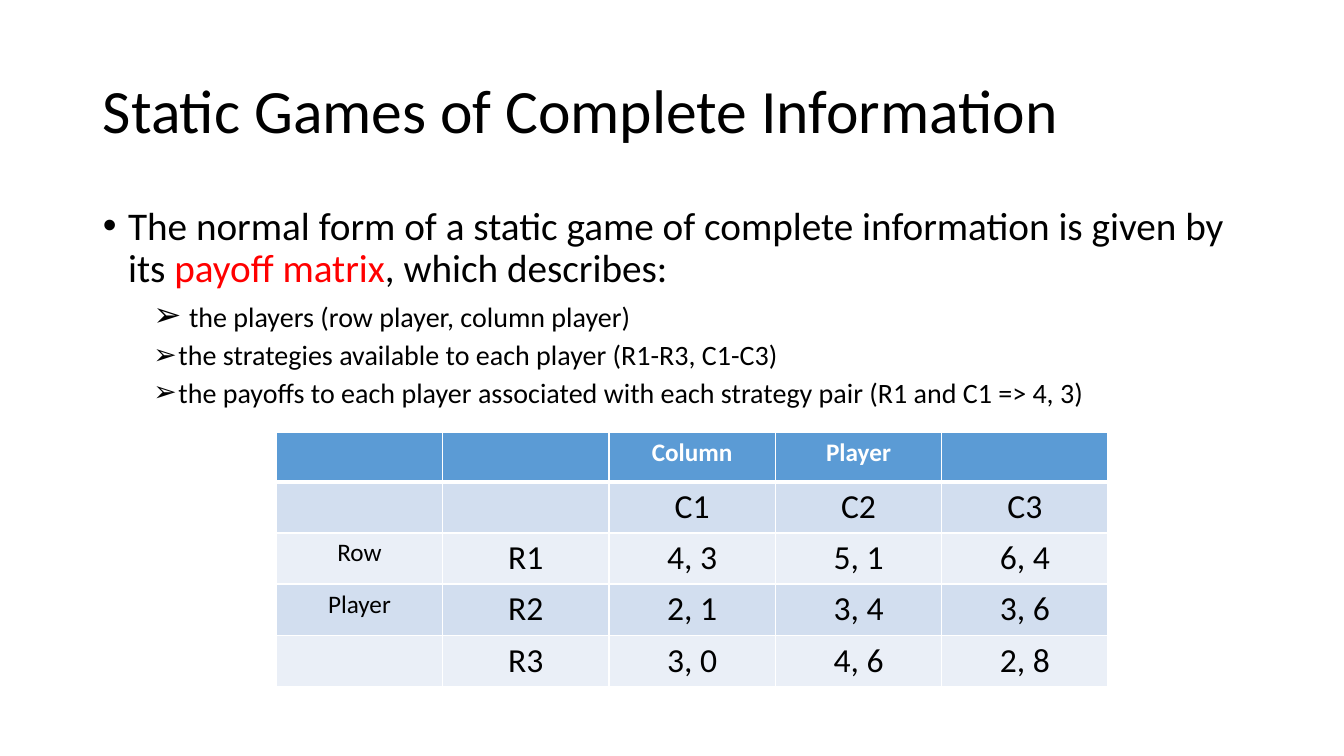
"""Build a slide on the normal form of static games with a payoff matrix."""
from lxml import etree
from pptx import Presentation
from pptx.dml.color import RGBColor
from pptx.enum import text
from pptx.oxml import ns
from pptx.util import Inches, Pt

BLACK = RGBColor(0x00, 0x00, 0x00)
RED = RGBColor(0xFF, 0x00, 0x00)
WHITE = RGBColor(0xFF, 0xFF, 0xFF)
HEADER_BLUE = RGBColor(0x5B, 0x9B, 0xD5)
DARK_BAND = RGBColor(0xD2, 0xDE, 0xEF)
LIGHT_BAND = RGBColor(0xEA, 0xEF, 0xF7)
FONT = "Calibri"

TITLE = "Static Games of Complete Information"
BULLETS = [
    (0, [("The normal form of a static game of complete information is given by its ", 28, BLACK),
         ("payoff matrix", 28, RED),
         (", which describes:", 28, BLACK)]),
    (1, [(" ", 24, BLACK), ("the players (row player, column player)", 20, BLACK)]),
    (1, [("the strategies available to each player (R1-R3, C1-C3)", 20, BLACK)]),
    (1, [("the payoffs to each player associated with each strategy pair (R1 and C1 => 4, 3)",
          20, BLACK)]),
]
LEVELS = [("•", 0.25, 10), ("➢", 0.75, 5)]
PAYOFFS = [
    ["", "", "Column", "Player", ""],
    ["", "", "C1", "C2", "C3"],
    ["Row", "R1", "4, 3", "5, 1", "6, 4"],
    ["Player", "R2", "2, 1", "3, 4", "3, 6"],
    ["", "R3", "3, 0", "4, 6", "2, 8"],
]
COLUMN_WIDTH, ROW_HEIGHT = 1.65, 0.49


def style(run, size, color, bold=False):
    """Set the font of a run."""
    run.font.name, run.font.size, run.font.bold = FONT, Pt(size), bold
    run.font.color.rgb = color


def place(shape, left, top, width, height, anchor):
    """Position a placeholder and fix its text frame."""
    shape.left, shape.top = Inches(left), Inches(top)
    shape.width, shape.height = Inches(width), Inches(height)
    frame = shape.text_frame
    frame.auto_size = text.MSO_AUTO_SIZE.NONE
    frame.word_wrap = True
    frame.vertical_anchor = anchor
    return frame


def set_bullet(paragraph, level):
    """Give a paragraph the bullet, indent and spacing of its level."""
    character, margin, space_before = LEVELS[level]
    paragraph.level = level
    paragraph.line_spacing = 0.9
    paragraph.space_before = Pt(space_before)
    properties = paragraph._p.get_or_add_pPr()
    properties.set("marL", str(Inches(margin)))
    properties.set("indent", str(Inches(-0.25)))
    etree.SubElement(properties, ns.qn("a:buFont")).set("typeface", "Arial")
    etree.SubElement(properties, ns.qn("a:buChar")).set("char", character)


def set_borders(cell, bottom_width):
    """Draw white borders around a cell."""
    properties = cell._tc.get_or_add_tcPr()
    sides = [("lnL", 1), ("lnR", 1), ("lnT", 1), ("lnB", bottom_width)]
    for position, (side, width) in enumerate(sides):
        line = etree.Element(ns.qn(f"a:{side}"), w=str(Pt(width)))
        fill = etree.SubElement(line, ns.qn("a:solidFill"))
        etree.SubElement(fill, ns.qn("a:srgbClr")).set("val", str(WHITE))
        properties.insert(position, line)


def add_payoff_matrix(slide):
    """Add the payoff table."""
    rows, columns = len(PAYOFFS), len(PAYOFFS[0])
    table = slide.shapes.add_table(
        rows, columns, Inches(2.74), Inches(4.29),
        Inches(COLUMN_WIDTH * columns), Inches(ROW_HEIGHT * rows)).table
    for column in table.columns:
        column.width = Inches(COLUMN_WIDTH)
    for row_index, values in enumerate(PAYOFFS):
        table.rows[row_index].height = Inches(ROW_HEIGHT)
        header = row_index == 0
        band = HEADER_BLUE if header else DARK_BAND if row_index % 2 else LIGHT_BAND
        for column_index, value in enumerate(values):
            cell = table.cell(row_index, column_index)
            cell.fill.solid()
            cell.fill.fore_color.rgb = band
            bottom_width = 3 if header else 1
            set_borders(cell, bottom_width)
            if row_index == 1:
                cell._tc.tcPr.find(ns.qn("a:lnT")).set("w", str(Pt(3)))
            cell.text_frame.text = value
            paragraph = cell.text_frame.paragraphs[0]
            paragraph.alignment = text.PP_ALIGN.CENTER
            size = 18 if header or column_index == 0 else 24
            for run in paragraph.runs:
                style(run, size, WHITE if header else BLACK, header)


def main():
    """Create the presentation."""
    presentation = Presentation()
    presentation.slide_width, presentation.slide_height = Inches(13.33), Inches(7.5)
    slide = presentation.slides.add_slide(presentation.slide_layouts[1])

    title = place(slide.shapes.title, 0.92, 0.4, 11.5, 1.45, text.MSO_ANCHOR.MIDDLE)
    title.text = TITLE
    heading = title.paragraphs[0]
    heading.alignment = text.PP_ALIGN.LEFT
    heading.line_spacing = 0.9
    style(heading.runs[0], 44, BLACK)

    body = place(slide.placeholders[1], 0.92, 2, 11.5, 4.76, text.MSO_ANCHOR.TOP)
    for index, (level, pieces) in enumerate(BULLETS):
        paragraph = body.add_paragraph() if index else body.paragraphs[0]
        set_bullet(paragraph, level)
        for words, size, color in pieces:
            run = paragraph.add_run()
            run.text = words
            style(run, size, color)

    add_payoff_matrix(slide)
    presentation.save("out.pptx")


if __name__ == "__main__":
    main()
